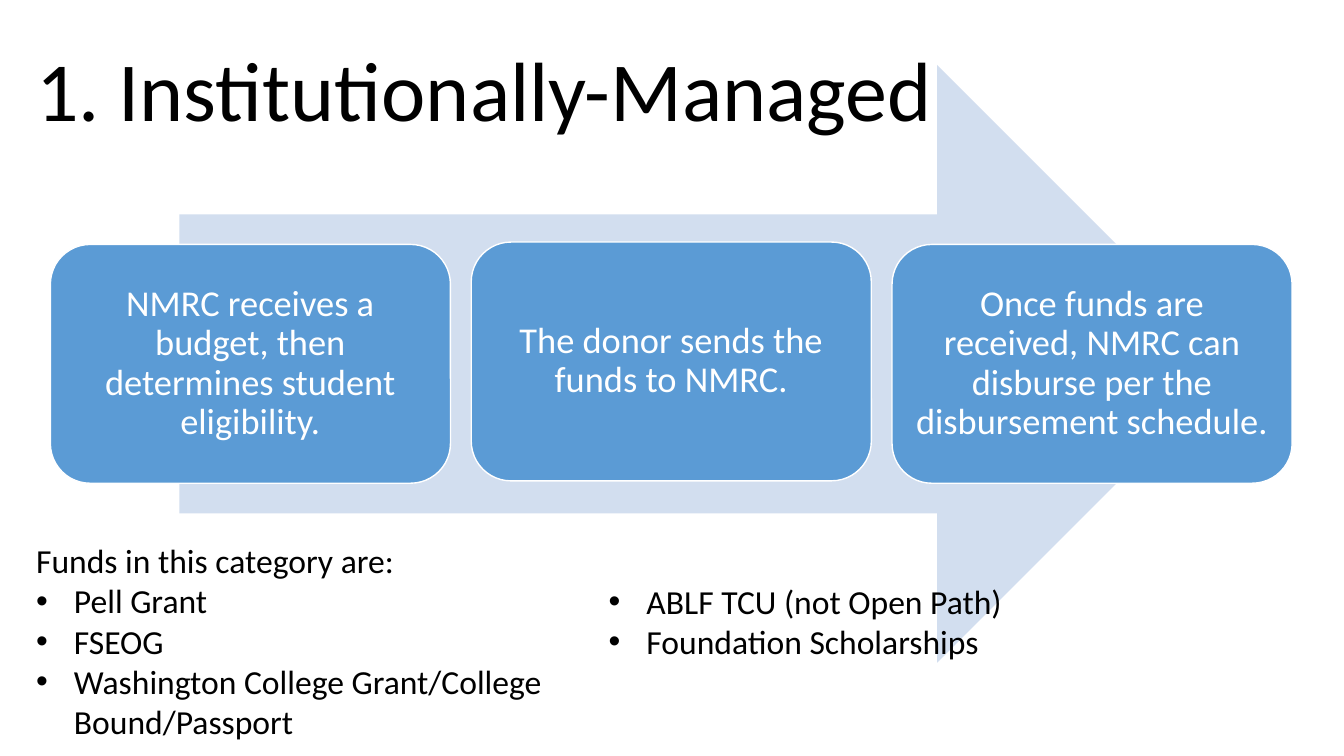
from dataclasses import dataclass

from lxml import etree
from pptx import Presentation
from pptx.dml.color import RGBColor
from pptx.enum.shapes import MSO_SHAPE as Preset
from pptx.enum.text import MSO_ANCHOR as Anchor, PP_ALIGN as Align
from pptx.oxml.ns import qn
from pptx.util import Pt


@dataclass(frozen=True)
class Theme:
    font: str = "Calibri"
    text: RGBColor = RGBColor(0x00, 0x00, 0x00)
    light: RGBColor = RGBColor(0xFF, 0xFF, 0xFF)
    arrow: RGBColor = RGBColor(0xD2, 0xDE, 0xEF)
    card: RGBColor = RGBColor(0x5B, 0x9B, 0xD5)
    title_size: int = 60
    card_size: int = 26
    list_size: int = 24


@dataclass(frozen=True)
class Box:
    left: float
    top: float
    width: float
    height: float

    def lengths(self):
        return [Pt(value) for value in (self.left, self.top, self.width, self.height)]


THEME = Theme()
STEPS = [
    "NMRC receives a budget, then determines student eligibility.",
    "The donor sends the funds to NMRC.",
    "Once funds are received, NMRC can disburse per the disbursement schedule.",
]
FUNDS_HEADING = "Funds in this category are:"
FUND_COLUMNS = [
    ["Pell Grant", "FSEOG", "Washington College Grant/College Bound/Passport"],
    ["ABLF TCU (not Open Path)", "Foundation Scholarships"],
]


def add_run(paragraph, text, size, color):
    run = paragraph.add_run()
    run.text = text
    run.font.name = THEME.font
    run.font.size = Pt(size)
    run.font.color.rgb = color


def add_text_box(slide, box, anchor=Anchor.TOP):
    frame = slide.shapes.add_textbox(*box.lengths()).text_frame
    frame.word_wrap = True
    frame.vertical_anchor = anchor
    return frame


def add_filled_shape(slide, preset, box, color):
    shape = slide.shapes.add_shape(preset, *box.lengths())
    shape.shadow.inherit = False
    shape.fill.solid()
    shape.fill.fore_color.rgb = color
    return shape


def set_bullet(paragraph, indent):
    properties = paragraph._p.get_or_add_pPr()
    properties.set("marL", str(Pt(indent)))
    properties.set("indent", str(-Pt(indent)))
    etree.SubElement(properties, qn("a:buFont"), typeface="Arial")
    etree.SubElement(properties, qn("a:buChar"), char="•")


def add_title(slide, box, text):
    paragraph = add_text_box(slide, box, Anchor.MIDDLE).paragraphs[0]
    paragraph.line_spacing = 0.9
    add_run(paragraph, text, THEME.title_size, THEME.text)


def add_step(slide, box, text):
    card = add_filled_shape(slide, Preset.ROUNDED_RECTANGLE, box, THEME.card)
    card.line.color.rgb = THEME.light
    card.line.width = Pt(1)
    frame = card.text_frame
    frame.word_wrap = True
    frame.vertical_anchor = Anchor.MIDDLE
    frame.margin_left = frame.margin_right = Pt(7.8)
    paragraph = frame.paragraphs[0]
    paragraph.alignment = Align.CENTER
    paragraph.line_spacing = 0.9
    add_run(paragraph, text, THEME.card_size, THEME.light)


def add_process(slide, box, steps):
    arrow_left = box.left + 92.2
    arrow_box = Box(arrow_left, box.top, 754.6, box.height)
    arrow = add_filled_shape(slide, Preset.RIGHT_ARROW, arrow_box, THEME.arrow)
    arrow.line.fill.background()

    card_width, card_height = 285.8, 170.6
    pitch = (box.width - card_width) / (len(steps) - 1)
    middle_top = box.top + (box.height - card_height) / 2
    for index, text in enumerate(steps):
        top = middle_top - (1.7 if index == 1 else 0)
        add_step(slide, Box(box.left + index * pitch, top, card_width, card_height), text)


def add_fund_list(slide, box, heading, columns):
    inset, line_height = 7.2, 29
    column_width = (box.width - 2 * inset) / len(columns)
    for index, funds in enumerate(columns):
        drop = line_height if index else 0
        column_box = Box(box.left + index * column_width, box.top + drop,
                         column_width + 2 * inset, box.height - drop)
        frame = add_text_box(slide, column_box)
        paragraph = frame.paragraphs[0]
        if index == 0:
            add_run(paragraph, heading, THEME.list_size, THEME.text)
            paragraph = frame.add_paragraph()
        for position, fund in enumerate(funds):
            if position:
                paragraph = frame.add_paragraph()
            set_bullet(paragraph, 27)
            add_run(paragraph, fund, THEME.list_size, THEME.text)


def main():
    presentation = Presentation()
    presentation.slide_width = Pt(960)
    presentation.slide_height = Pt(540)
    slide = presentation.slides.add_slide(presentation.slide_layouts[6])

    add_title(slide, Box(18.7, 15.1, 769.7, 104.4), "1. Institutionally-Managed")
    add_process(slide, Box(36, 46.4, 887, 427), STEPS)
    add_fund_list(slide, Box(18.7, 382.2, 832.3, 154), FUNDS_HEADING, FUND_COLUMNS)
    presentation.save("out.pptx")


if __name__ == "__main__":
    main()
